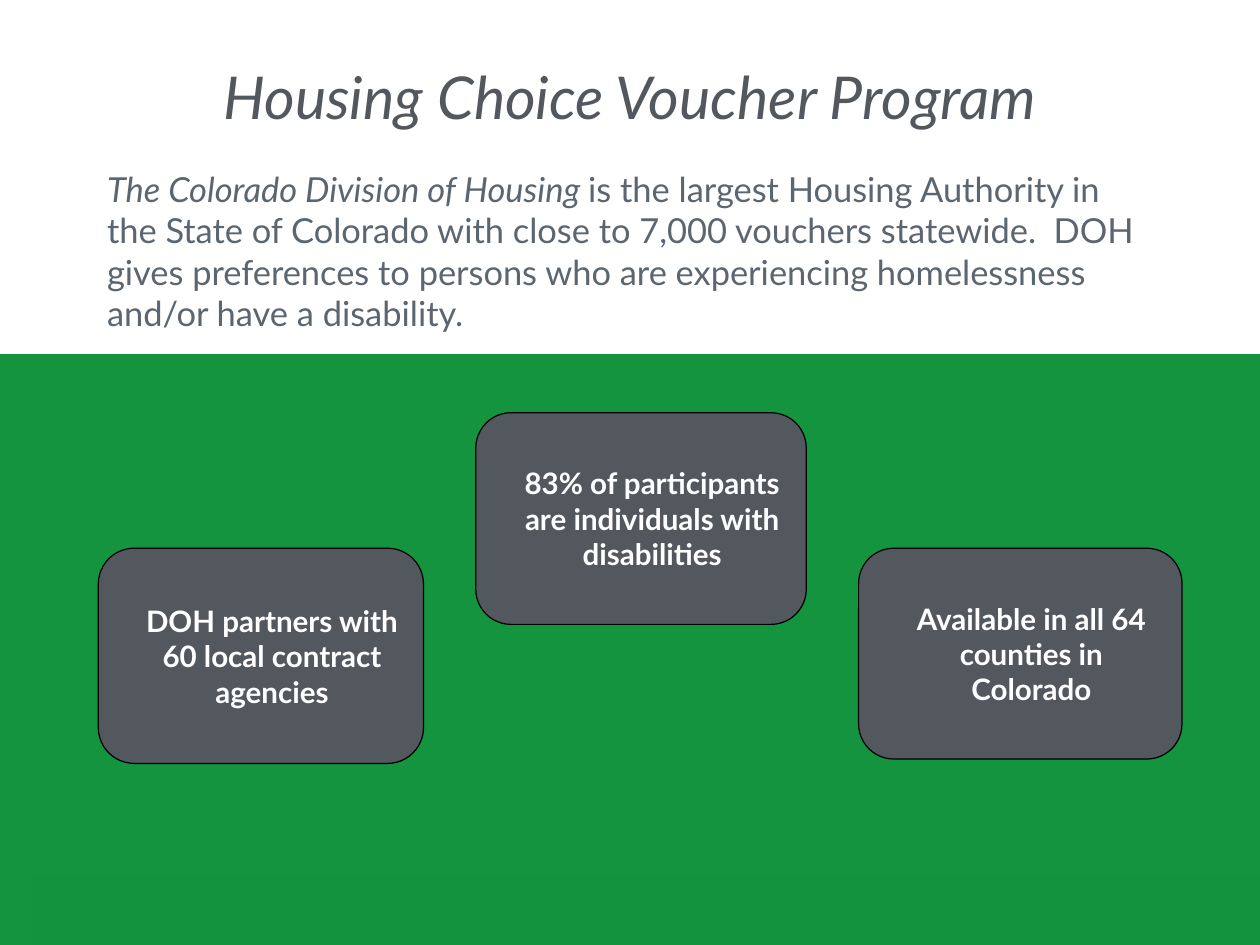
from dataclasses import dataclass

import pptx
import pptx.dml.color
import pptx.enum.shapes
import pptx.enum.text
import pptx.oxml
import pptx.oxml.ns
import pptx.util
from pptx.util import Inches

ALIGN = pptx.enum.text.PP_ALIGN
SHAPE = pptx.enum.shapes.MSO_SHAPE


@dataclass(frozen=True)
class Theme:
    font: str = "Lato"
    green: str = "14943F"
    dark_green: str = "007B26"
    slate: str = "53585F"
    body_gray: str = "5C6670"
    white: str = "FFFFFF"
    black: str = "000000"
    title_size: int = 48
    body_size: int = 28
    card_size: int = 24


THEME = Theme()
SLIDE_WIDTH, SLIDE_HEIGHT = 14.22, 10.67
MARGIN, TEXT_WIDTH = 1.11, 12
BAND_TOP, FOOTER_LEFT, FOOTER_TOP = 4, 0.36, 9.9

INTRO = [
    ("The Colorado Division of Housing ", True),
    ("is the largest Housing Authority in the State of Colorado with close to "
     "7,000 vouchers statewide.  DOH gives preferences to persons who are "
     "experiencing homelessness and/or have a disability.", False),
]
CARDS = [
    ((5.37, 4.66, 3.73, 2.39), "83% of participants are individuals with disabilities"),
    ((MARGIN, 6.19, 3.67, 2.43), "DOH partners with 60 local contract agencies"),
    ((9.69, 6.19, 3.65, 2.38), "Available in all 64 counties in Colorado"),
]


def rgb(color):
    return pptx.dml.color.RGBColor.from_string(color)


def add_span(para, text, size, color, bold=False, italic=False):
    span = para.add_run()
    span.text = text
    font = span.font
    font.name, font.size = THEME.font, pptx.util.Pt(size)
    font.bold, font.italic = bold, italic
    font.color.rgb = rgb(color)


def middle_paragraph(box, align, inset):
    """Set up wrapped, vertically centred text and return its first paragraph."""
    frame = box.text_frame
    frame.word_wrap = True
    frame.vertical_anchor = pptx.enum.text.MSO_ANCHOR.MIDDLE
    frame.margin_left = frame.margin_right = Inches(inset)
    frame.margin_top = frame.margin_bottom = Inches(inset)
    para = frame.paragraphs[0]
    para.alignment = align
    return para


def add_text(page, top, height, spans, size, color, align):
    box = page.shapes.add_textbox(
        Inches(MARGIN), Inches(top), Inches(TEXT_WIDTH), Inches(height))
    para = middle_paragraph(box, align, 0.1)
    for text, italic in spans:
        add_span(para, text, size, color, italic=italic)


def add_filled_shape(page, kind, bounds, color):
    shape = page.shapes.add_shape(kind, *map(Inches, bounds))
    shape.shadow.inherit = False
    shape.fill.solid()
    shape.fill.fore_color.rgb = rgb(color)
    shape.line.fill.background()
    return shape


def set_opacity(shape, percent):
    fill_color = shape.fill._xPr.find(".//" + pptx.oxml.ns.qn("a:srgbClr"))
    alpha = pptx.oxml.parse_xml(
        f'<a:alpha {pptx.oxml.ns.nsdecls("a")} val="{percent * 1000}"/>')
    fill_color.append(alpha)


def add_card(page, bounds, text):
    card = add_filled_shape(page, SHAPE.ROUNDED_RECTANGLE, bounds, THEME.slate)
    card.line.color.rgb = rgb(THEME.black)
    card.line.width = pptx.util.Pt(1)
    para = middle_paragraph(card, ALIGN.CENTER, 0.06)
    properties = para._p.get_or_add_pPr()
    properties.set("marL", str(Inches(0.25)))
    properties.set("indent", "0")
    add_span(para, text, THEME.card_size, THEME.white, bold=True)


def main():
    deck = pptx.Presentation()
    deck.slide_width, deck.slide_height = Inches(SLIDE_WIDTH), Inches(SLIDE_HEIGHT)
    page = deck.slides.add_slide(deck.slide_layouts[6])

    add_filled_shape(page, SHAPE.RECTANGLE,
                     (0, BAND_TOP, SLIDE_WIDTH, SLIDE_HEIGHT - BAND_TOP), THEME.green)
    add_text(page, 0.58, 1, [("Housing Choice Voucher Program", True)],
             THEME.title_size, THEME.slate, ALIGN.CENTER)
    add_text(page, 1.83, 2, INTRO, THEME.body_size, THEME.body_gray, ALIGN.LEFT)
    for bounds, text in CARDS:
        add_card(page, bounds, text)
    footer = add_filled_shape(
        page, SHAPE.RECTANGLE,
        (FOOTER_LEFT, FOOTER_TOP, SLIDE_WIDTH - FOOTER_LEFT, SLIDE_HEIGHT - FOOTER_TOP),
        THEME.dark_green)
    set_opacity(footer, 4)

    deck.save("out.pptx")


if __name__ == "__main__":
    main()
